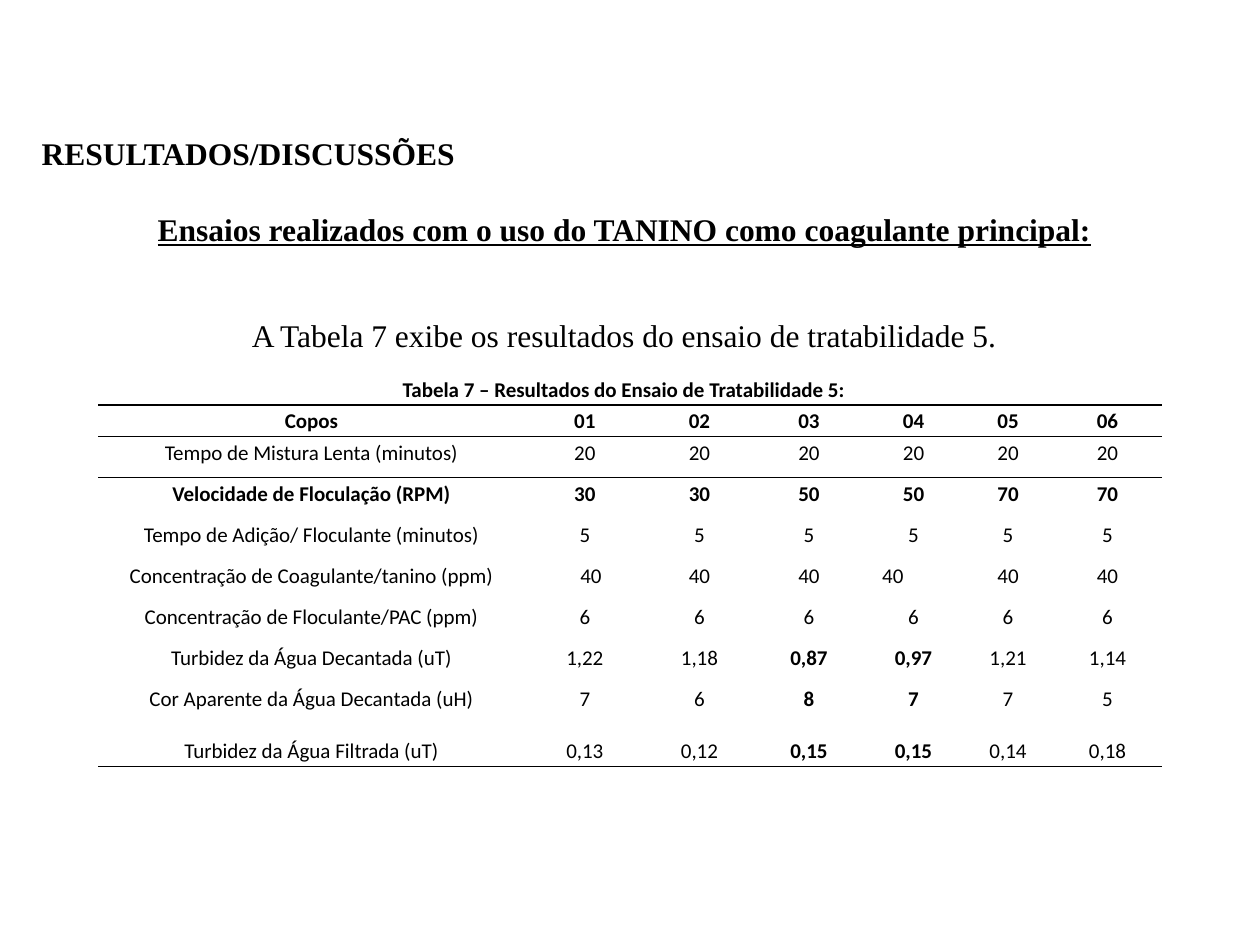
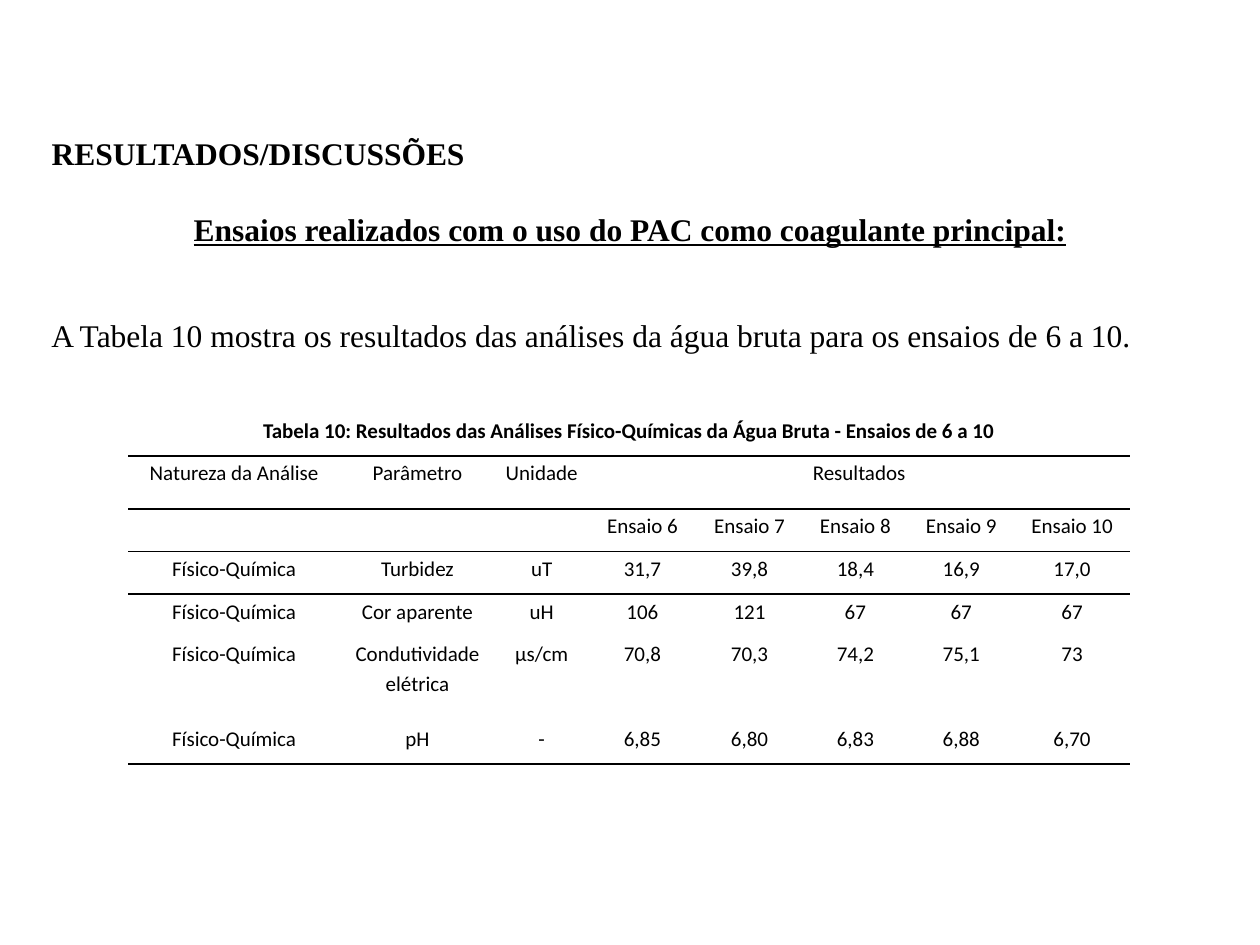
from lxml.etree import SubElement
from pptx import Presentation
from pptx.dml.color import RGBColor
from pptx.enum.text import MSO_ANCHOR as Anchor, MSO_AUTO_SIZE as AutoSize, PP_ALIGN as Align
from pptx.oxml import parse_xml
from pptx.oxml.ns import nsdecls, qn
from pptx.util import Pt

COLORS = {"ink": "000000"}
FONTS = {"heading": "Times New Roman", "table": "Calibri"}
PLAIN_TABLE = "{2D5ABB26-0587-4C30-8999-92F81FD0307C}"


class Report:
    def __init__(self):
        self.deck = Presentation()
        self.deck.slide_width, self.deck.slide_height = Pt(720), Pt(540)
        self.page = None

    def style(self, para, font, size, align, bold=False, underline=False):
        para.alignment = align
        for span in para.runs:
            span.font.name = FONTS[font]
            span.font.size = Pt(size)
            span.font.bold = bold
            span.font.underline = underline
            span.font.color.rgb = RGBColor.from_string(COLORS["ink"])

    def prepare(self, box):
        frame = box.text_frame
        frame.word_wrap = True
        frame.auto_size = AutoSize.NONE
        frame.vertical_anchor = Anchor.TOP
        frame.margin_left = frame.margin_right = Pt(7.2)
        frame.margin_top = frame.margin_bottom = Pt(3.6)
        return frame

    def add_page(self, title, left, width):
        self.page = self.deck.slides.add_slide(self.deck.slide_layouts[5])
        box = self.page.shapes.title
        box.left, box.top, box.width, box.height = Pt(left), Pt(73), Pt(width), Pt(28)
        frame = self.prepare(box)
        frame.text = title
        self.style(frame.paragraphs[0], "heading", 18, Align.LEFT, bold=True)

    def add_intro(self, subtitle, sentence, left, width, align):
        box = self.page.shapes.add_textbox(Pt(left), Pt(116.4), Pt(width), Pt(90))
        frame = self.prepare(box)
        frame.text = subtitle
        self.style(frame.paragraphs[0], "heading", 18, Align.CENTER, True, True)
        para = frame.add_paragraph()
        para.text = sentence
        para.space_before = Pt(39.3)
        self.style(para, "heading", 18, align)

    def add_tabs(self, para, stops):
        tabs = SubElement(para._p.get_or_add_pPr(), qn("a:tabLst"))
        for position, kind in stops:
            SubElement(tabs, qn("a:tab"), pos=str(Pt(position)), algn=kind)

    def add_rule(self, cell, side):
        line = parse_xml(
            f'<a:{side} {nsdecls("a")} w="{Pt(1)}"><a:solidFill>'
            f'<a:srgbClr val="{COLORS["ink"]}"/></a:solidFill></a:{side}>')
        properties = cell._tc.get_or_add_tcPr()
        properties.insert(len(properties) - 1, line)

    def add_table(self, left, top, widths, heights, rows, spans, ruled, bold, insets,
                  tabs=None, left_cells=()):
        frame = self.page.shapes.add_table(
            len(rows), len(widths), Pt(left), Pt(top), Pt(sum(widths)), Pt(sum(heights)))
        table = frame.table
        table.first_row = table.horz_banding = False
        table._tbl.tblPr.find(qn("a:tableStyleId")).text = PLAIN_TABLE
        for column, width in zip(table.columns, widths):
            column.width = Pt(width)
        for row, height in zip(table.rows, heights):
            row.height = Pt(height)
        for row, first, last in spans:
            table.cell(row, first).merge(table.cell(row, last))
        side, upper, lower = insets
        for r, row in enumerate(rows):
            for c in range(len(widths)):
                cell = table.cell(r, c)
                cell.margin_left = cell.margin_right = Pt(side)
                cell.margin_top, cell.margin_bottom = Pt(upper), Pt(lower)
                cell.fill.background()
                if r - 1 in ruled:
                    self.add_rule(cell, "lnT")
                if r in ruled:
                    self.add_rule(cell, "lnB")
                if c >= len(row) or not row[c]:
                    continue
                cell.text_frame.text = row[c]
                para = cell.text_frame.paragraphs[0]
                para.line_spacing = 1.15
                if tabs and (r, c) in tabs:
                    self.add_tabs(para, tabs[r, c])
                align = Align.LEFT if (r, c) in left_cells else Align.CENTER
                self.style(para, "table", 12, align, bold(r, c))


def build_tannin_page(report):
    left, width = 16.6, 680.4
    report.add_page("RESULTADOS/DISCUSSÕES", left, width)
    report.add_intro(
        "Ensaios realizados com o uso do TANINO como coagulante principal:",
        "A Tabela 7 exibe os resultados do ensaio de tratabilidade 5.",
        left, width, Align.CENTER)
    rows = [
        ["Tabela 7 – Resultados do Ensaio de Tratabilidade 5:\t"],
        ["Copos", "01", "02", "03", "04", "05", "06"],
        ["Tempo de Mistura Lenta (minutos)"] + ["20"] * 6,
        ["Velocidade de Floculação (RPM)", "30", "30", "50", "50", "70", "70"],
        ["Tempo de Adição/ Floculante (minutos)"] + ["5"] * 6,
        ["Concentração de Coagulante/tanino (ppm)", "\t40", "40", "40", "\t40", "40", "40"],
        ["Concentração de Floculante/PAC (ppm)"] + ["6"] * 6,
        ["Turbidez da Água Decantada (uT)", "1,22", "1,18", "0,87", "0,97", "1,21", "1,14"],
        ["Cor Aparente da Água Decantada (uH)", "7", "6", "8", "7", "7", "5"],
        ["Turbidez da Água Filtrada (uT)", "0,13", "0,12", "0,15", "0,15", "0,14", "0,18"],
    ]
    centre_tab = [(13, "ctr")]
    report.add_table(
        56, 213.8, [244, 68.4, 62.6, 62.6, 56.9, 51.1, 62.6],
        [17.8] * 2 + [23.5] * 6 + [29.6, 18], rows,
        spans=[(0, 0, 6)], ruled={0, 1, 9},
        bold=lambda r, c: r in (0, 1, 3) or (r >= 7 and c in (3, 4)),
        insets=(3.6, 0, 0),
        tabs={(0, 0): [(101.5, "l"), (221.8, "ctr"), (260, "l")],
              (5, 1): centre_tab, (5, 4): centre_tab},
        left_cells={(5, 4)})


def build_raw_water_page(report):
    left, width = 22.3, 675.4
    report.add_page("RESULTADOS/DISCUSSÕES", left, width)
    report.add_intro(
        "Ensaios realizados com o uso do PAC como coagulante principal:",
        "A Tabela 10 mostra os resultados das análises da água bruta para os ensaios de 6 a 10.",
        left, width, Align.LEFT)
    analyses = [
        ["Turbidez", "uT", "31,7", "39,8", "18,4", "16,9", "17,0"],
        ["Cor aparente", "uH", "106", "121", "67", "67", "67"],
        ["Condutividade elétrica", "µs/cm", "70,8", "70,3", "74,2", "75,1", "73"],
        ["pH", "-", "6,85", "6,80", "6,83", "6,88", "6,70"],
    ]
    rows = [
        ["Tabela 10: Resultados das Análises Físico-Químicas da Água Bruta - Ensaios de 6 a 10"],
        ["Natureza da Análise", "Parâmetro", "Unidade", "Resultados"],
        [""] * 3 + [f"Ensaio {number}" for number in range(6, 11)],
    ] + [["Físico-Química"] + analysis for analysis in analyses]
    report.add_table(
        73.3, 236.2, [121, 88.6, 53.3, 61.9, 60.5, 60.5, 60.5, 66.2],
        [24.4, 30.3, 24.2, 24.5, 24.5, 48.3, 24.4], rows,
        spans=[(0, 0, 7), (1, 3, 7)], ruled={0, 1, 2, 6},
        bold=lambda r, c: r == 0, insets=(0.7, 0.7, 0))


def main():
    report = Report()
    build_tannin_page(report)
    build_raw_water_page(report)
    report.deck.save("out.pptx")


if __name__ == "__main__":
    main()
